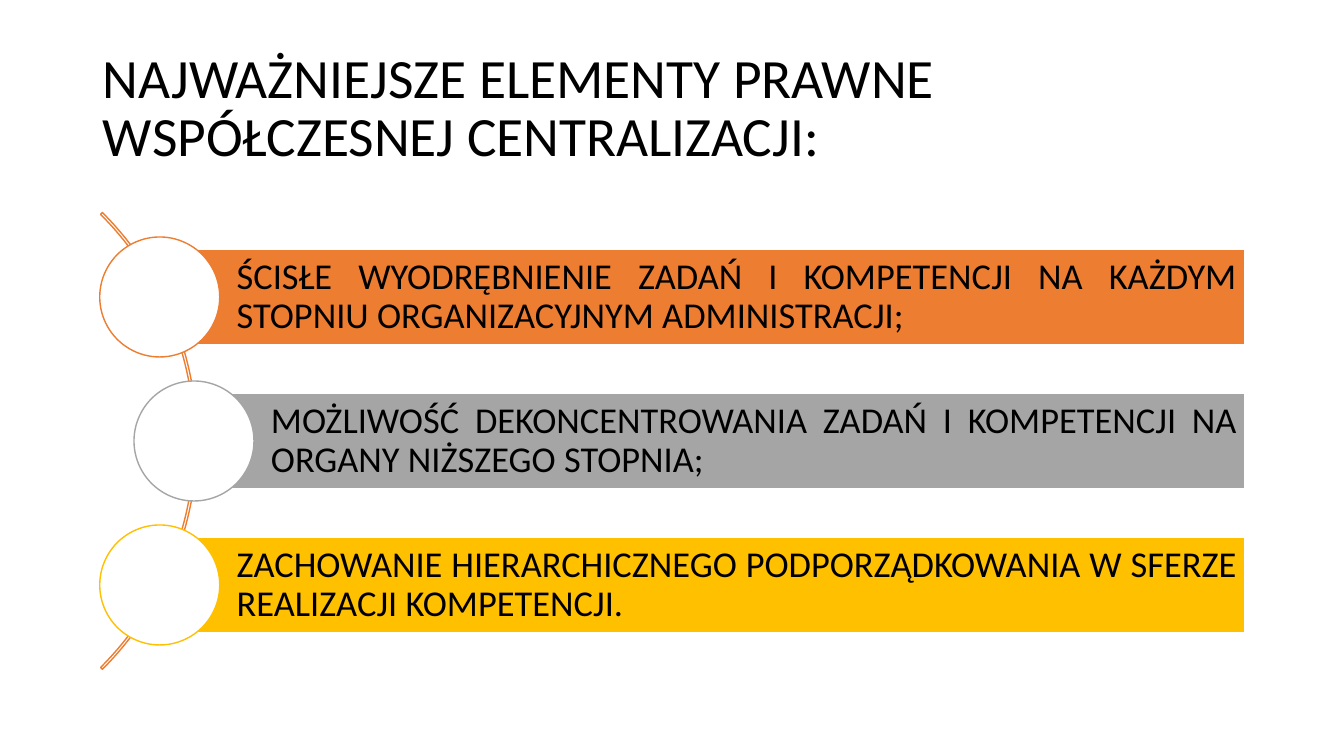
import math

import pptx
import pptx.dml.color
import pptx.enum.shapes
import pptx.enum.text
import pptx.util

PX = 9144000 / 1008  # EMU per px
SHAPE = pptx.enum.shapes.MSO_SHAPE
ALIGN = pptx.enum.text.PP_ALIGN
FONT = "Calibri"
ORANGE, GREY, YELLOW = "ED7D31", "A5A5A5", "FFC000"
BLACK, WHITE = "000000", "FFFFFF"

TITLE = "NAJWAŻNIEJSZE ELEMENTY PRAWNE WSPÓŁCZESNEJ CENTRALIZACJI:"
ELEMENTS = [
    ("ŚCISŁE WYODRĘBNIENIE ZADAŃ I KOMPETENCJI NA KAŻDYM STOPNIU "
     "ORGANIZACYJNYM ADMINISTRACJI;", ORANGE),
    ("MOŻLIWOŚĆ DEKONCENTROWANIA ZADAŃ I KOMPETENCJI NA ORGANY "
     "NIŻSZEGO STOPNIA;", GREY),
    ("ZACHOWANIE HIERARCHICZNEGO PODPORZĄDKOWANIA W SFERZE REALIZACJI "
     "KOMPETENCJI.", YELLOW),
]


def px(n):
    return pptx.util.Emu(round(n * PX))


def rgb(value):
    return pptx.dml.color.RGBColor.from_string(value)


def add_shape(slide, kind, box, fill, line):
    sp = slide.shapes.add_shape(kind, *map(px, box))
    sp.shadow.inherit = False
    if fill:
        sp.fill.solid()
        sp.fill.fore_color.rgb = rgb(fill)
    else:
        sp.fill.background()
    sp.line.color.rgb = rgb(line)
    sp.line.width = pptx.util.Pt(1)
    return sp


def set_text(sp, text, size, align, spacing, insets):
    tf = sp.text_frame
    tf.word_wrap = True
    tf.vertical_anchor = pptx.enum.text.MSO_ANCHOR.MIDDLE
    (tf.margin_left, tf.margin_top,
     tf.margin_right, tf.margin_bottom) = map(px, insets)
    tf.text = text
    p = tf.paragraphs[0]
    p.alignment = align
    p.line_spacing = spacing
    font = p.runs[0].font
    font.name = FONT
    font.size = pptx.util.Pt(size)
    font.color.rgb = rgb(BLACK)


def add_title(slide, box):
    sp = slide.shapes.add_textbox(*map(px, box))
    set_text(sp, TITLE, 39.6, ALIGN.LEFT, 0.87, (10, 5, 10, 5))


def add_curved_list(slide, box):
    left, top, width, height = box
    middle = top + height / 2
    radius, pitch, bar_h, circle = 320, 144, 96, 120
    arc_x = left - 225  # centre of the arc, off to the left

    # Arc that the circles sit on
    outer = radius + 3
    arc = add_shape(slide, SHAPE.BLOCK_ARC,
                    (arc_x - outer, middle - outer, 2 * outer, 2 * outer),
                    None, ORANGE)
    for i, value in enumerate((189, 27, 0.004)):
        arc.adjustments[i] = value

    # Bars, each starting at the centre of its circle
    for i, (text, color) in enumerate(ELEMENTS):
        dy = (i - 1) * pitch
        x = arc_x + math.sqrt(radius ** 2 - dy ** 2)
        y = middle + dy
        bar = add_shape(slide, SHAPE.RECTANGLE,
                        (x, y - bar_h / 2, left + width - x, bar_h),
                        color, WHITE)
        set_text(bar, text, 26, ALIGN.JUSTIFY, 0.9, (77, 7, 7, 7))
        add_shape(slide, SHAPE.OVAL,
                  (x - circle / 2, y - circle / 2, circle, circle),
                  WHITE, color)


def main():
    prs = pptx.Presentation()
    prs.slide_width, prs.slide_height = px(1344), px(756)
    slide = prs.slides.add_slide(prs.slide_layouts[6])
    add_title(slide, (93, 37, 1159, 146))
    add_curved_list(slide, (99, 212, 1146, 458))
    prs.save("out.pptx")


if __name__ == "__main__":
    main()
